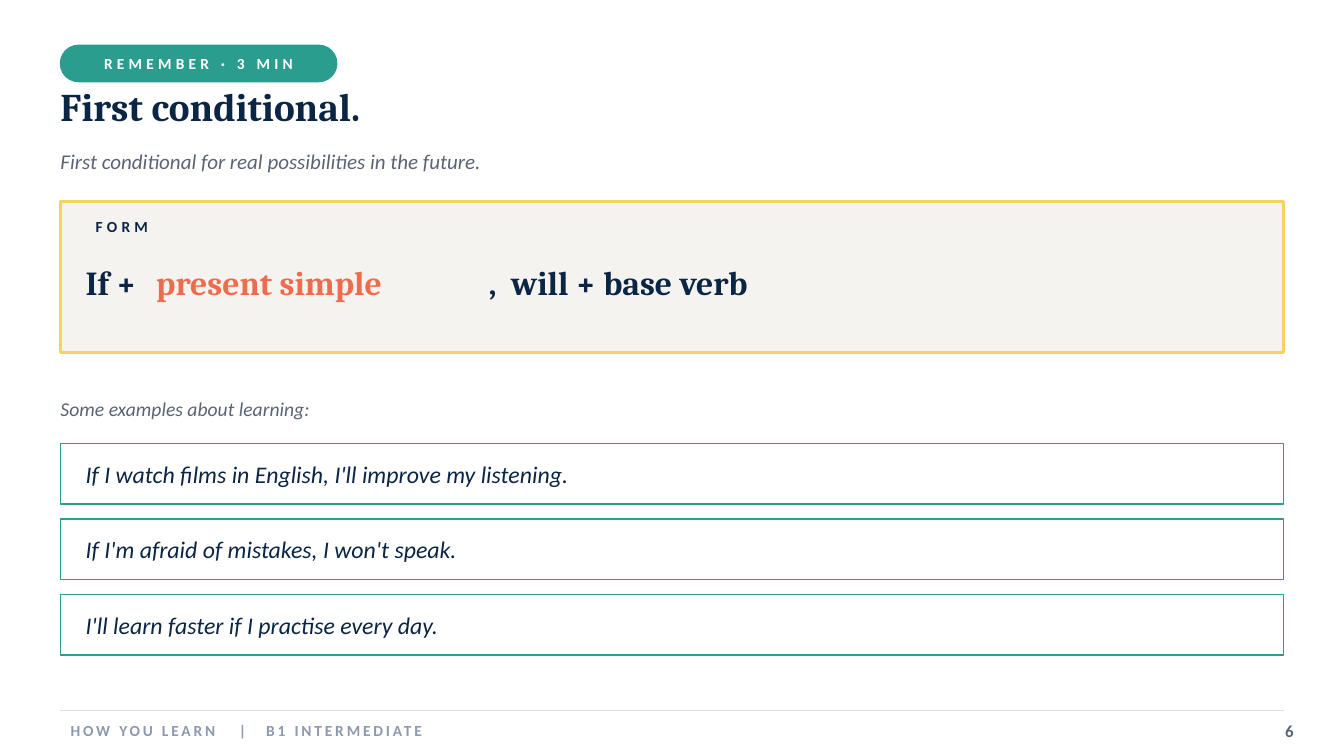
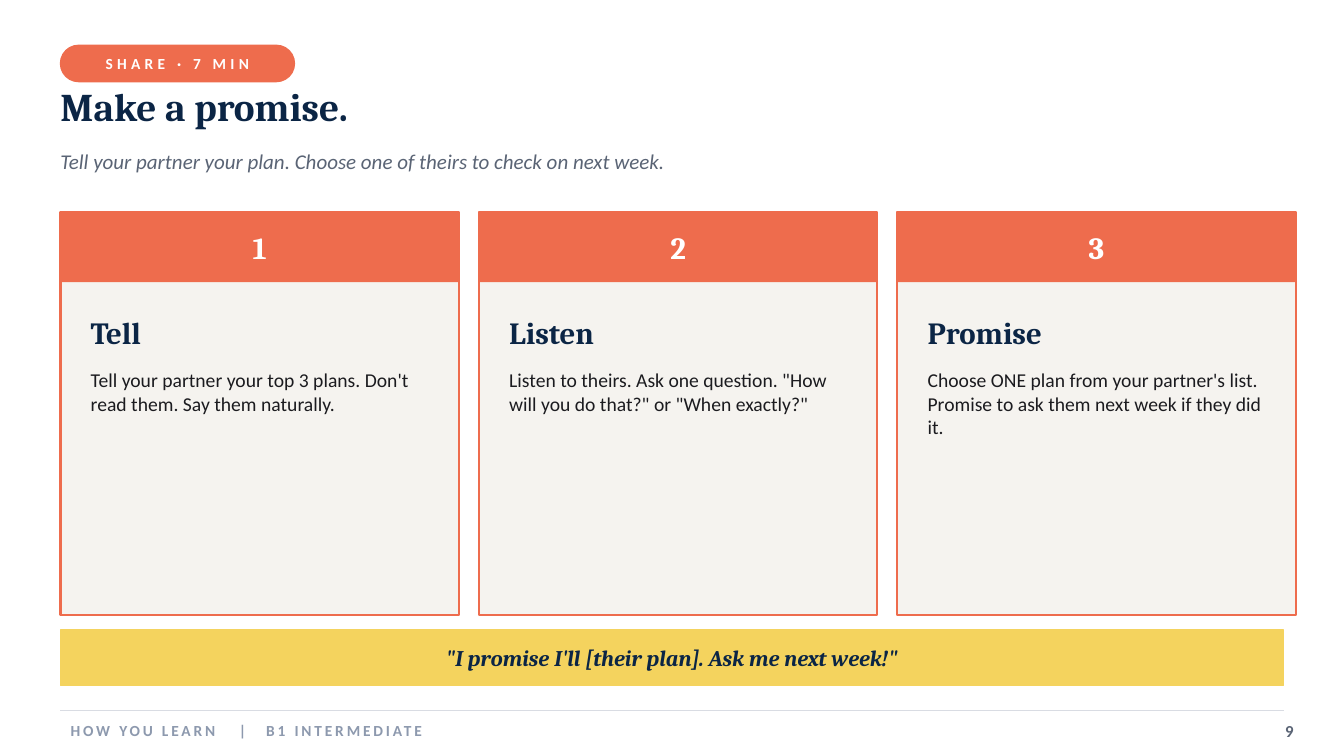
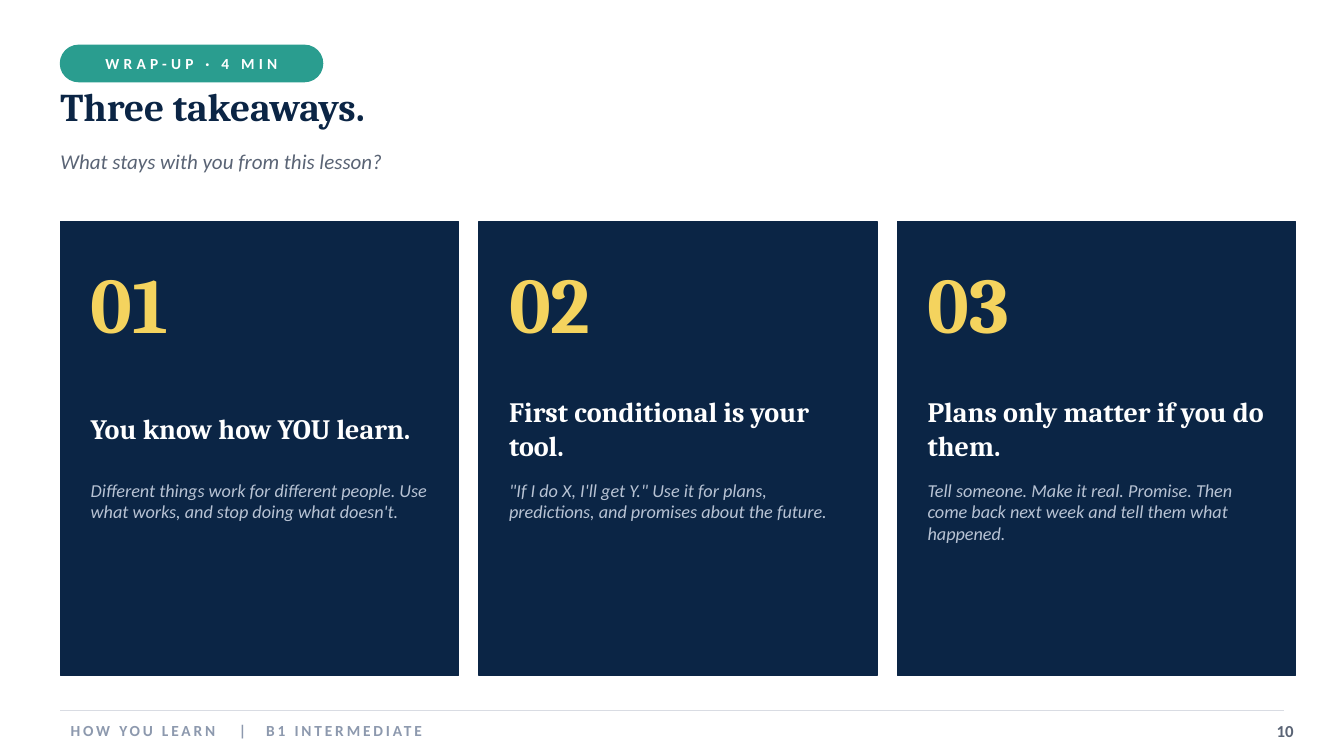
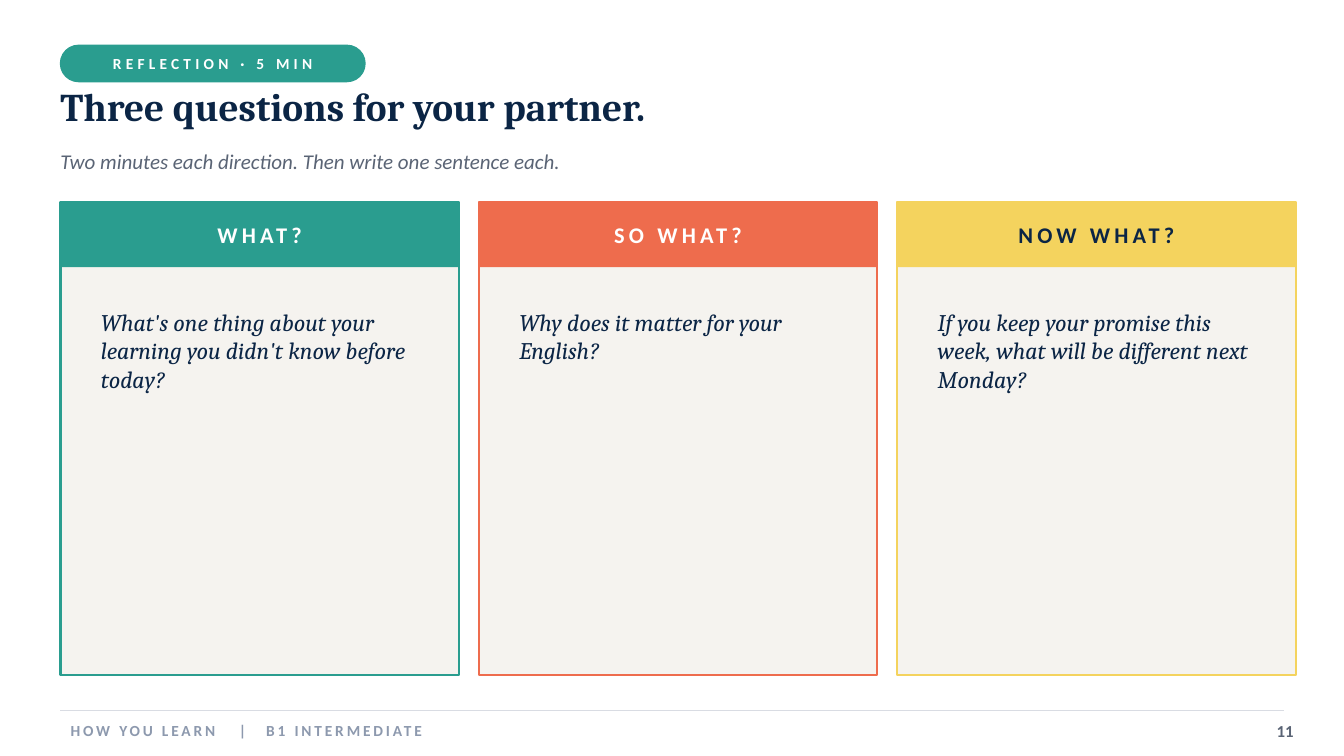
from collections import namedtuple
from dataclasses import dataclass

from lxml.etree import SubElement
from pptx import Presentation
from pptx.dml.color import RGBColor
from pptx.enum.shapes import MSO_CONNECTOR, MSO_SHAPE
from pptx.enum.text import MSO_ANCHOR, PP_ALIGN
from pptx.oxml.ns import qn
from pptx.util import Inches, Pt

Face = namedtuple("Face", "size font color bold italic track", defaults=(False, False, 0))


@dataclass(frozen=True)
class Theme:
    navy: str = "0B2545"
    teal: str = "2A9D8F"
    coral: str = "EE6C4D"
    gold: str = "F4D35E"
    cream: str = "F5F3EF"
    white: str = "FFFFFF"
    rule: str = "D9DCE3"
    pill: Face = Face(11, "Calibri", "FFFFFF", True, track=3)
    title: Face = Face(28, "Cambria", "0B2545", True)
    lead: Face = Face(15, "Calibri", "5A6475", italic=True)
    foot: Face = Face(11, "Calibri", "8D99AE", True, track=2)
    page: Face = Face(12, "Calibri", "5A6475", True)
    label: Face = Face(11, "Calibri", "0B2545", True, track=3)
    form: Face = Face(24, "Cambria", "0B2545", True)
    note: Face = Face(14, "Calibri", "5A6475", italic=True)
    sample: Face = Face(17, "Calibri", "0B2545", italic=True)
    step: Face = Face(22, "Cambria", "0B2545", True)
    body: Face = Face(14, "Calibri", "1B1B1F")
    quote: Face = Face(16, "Cambria", "0B2545", True, True)
    digit: Face = Face(56, "Cambria", "F4D35E", True)
    point: Face = Face(20, "Cambria", "FFFFFF", True)
    detail: Face = Face(13, "Calibri", "B8C3D4", italic=True)
    band: Face = Face(16, "Calibri", "FFFFFF", True, track=3)
    ask: Face = Face(17, "Cambria", "0B2545", italic=True)


theme = Theme()
cell = Inches(0.1)
left, full = 6, 121.3
card, gap, inset = 39.5, 2, 3
inner = card - 2 * inset
cols = [left + i * (card + gap) for i in range(3)]


def block(slide, x, y, w, h, fill, line=None, width=1, kind=MSO_SHAPE.RECTANGLE):
    shape = slide.shapes.add_shape(kind, *[round(n * cell) for n in (x, y, w, h)])
    shape.shadow.inherit = False
    shape.fill.solid()
    shape.fill.fore_color.rgb = RGBColor.from_string(fill)
    if line:
        shape.line.color.rgb = RGBColor.from_string(line)
        shape.line.width = Pt(width)
    else:
        shape.line.fill.background()
    return shape


def write(slide, text, face, place, color=None, align=PP_ALIGN.LEFT,
          anchor=MSO_ANCHOR.MIDDLE, pad=0, tabs=()):
    if isinstance(place, tuple):
        place = slide.shapes.add_textbox(*[round(n * cell) for n in place])
    frame = place.text_frame
    frame.word_wrap = True
    frame.vertical_anchor = anchor
    frame.margin_left = round(pad * cell)
    frame.margin_right = frame.margin_top = frame.margin_bottom = 0
    frame.text = text
    para = frame.paragraphs[0]
    para.alignment = align
    if tabs:
        stops = SubElement(para._p.get_or_add_pPr(), qn("a:tabLst"))
        for stop in tabs:
            SubElement(stops, qn("a:tab"), pos=str(round(stop * cell)), algn="l")
    run = para.runs[0]
    font = run.font
    font.name, font.size = face.font, Pt(face.size)
    font.bold, font.italic = face.bold, face.italic
    font.color.rgb = RGBColor.from_string(color or face.color)
    if face.track:
        run._r.get_or_add_rPr().set("spc", str(face.track * 100))


deck = Presentation()
deck.slide_width, deck.slide_height = round(133.3 * cell), 75 * cell

heads = [
    ("REMEMBER · 3 MIN", theme.teal, "First conditional.",
     "First conditional for real possibilities in the future.", 6),
    ("SHARE · 7 MIN", theme.coral, "Make a promise.",
     "Tell your partner your plan. Choose one of theirs to check on next week.", 9),
    ("WRAP-UP · 4 MIN", theme.teal, "Three takeaways.",
     "What stays with you from this lesson?", 10),
    ("REFLECTION · 5 MIN", theme.teal, "Three questions for your partner.",
     "Two minutes each direction. Then write one sentence each.", 11),
]
for tag, tint, title, lead, page in heads:
    slide = deck.slides.add_slide(deck.slide_layouts[6])
    pill = block(slide, left, 4.5, 5 + 1.4 * len(tag), 3.6, tint, tint,
                 kind=MSO_SHAPE.ROUNDED_RECTANGLE)
    pill.adjustments[0] = 0.5
    write(slide, tag, theme.pill, pill, align=PP_ALIGN.CENTER)
    write(slide, title, theme.title, (left, 7, 120, 7))
    write(slide, lead, theme.lead, (left, 14, 120, 4))
    rule = slide.shapes.add_connector(
        MSO_CONNECTOR.STRAIGHT, *[round(n * cell) for n in (left, 70.5, left + full, 70.5)])
    rule.line.color.rgb = RGBColor.from_string(theme.rule)
    rule.line.width = Pt(0.75)
    SubElement(rule._element.spPr, qn("a:effectLst"))
    write(slide, "HOW YOU LEARN\t|\tB1 INTERMEDIATE", theme.foot,
          (left + 1, 71, 108, 3), tabs=(16.7, 19.4))
    write(slide, str(page), theme.page, (123.3, 71, 5, 3), align=PP_ALIGN.RIGHT)

rules, share, wrap, reflect = deck.slides

block(rules, left, 20, full, 15, theme.cream, theme.gold, 2)
write(rules, "FORM", theme.label, (9.5, 21, 108, 3))
write(rules, "If +", theme.form, (8.5, 25, 7, 6))
write(rules, "present simple", theme.form, (15.5, 25, 33, 6), theme.coral)
write(rules, ",\twill + base verb", theme.form, (48.5, 25, 55, 6), tabs=(2.2,))
write(rules, "Some examples about learning:", theme.note, (left, 38.5, 120, 4))
samples = [
    "If I watch films in English, I'll improve my listening.",
    "If I'm afraid of mistakes, I won't speak.",
    "I'll learn faster if I practise every day.",
]
for i, text in enumerate(samples):
    row = block(rules, left, 44 + 7.5 * i, full, 6, theme.white, theme.teal)
    write(rules, text, theme.sample, row, pad=2.5)

steps = [
    ("Tell", "Tell your partner your top 3 plans. Don't read them. Say them naturally."),
    ("Listen", 'Listen to theirs. Ask one question. "How will you do that?" or "When exactly?"'),
    ("Promise", "Choose ONE plan from your partner's list. "
                "Promise to ask them next week if they did it."),
]
for i, (x, (name, text)) in enumerate(zip(cols, steps), 1):
    block(share, x, 21, card, 40, theme.cream, theme.coral, 1.5)
    band = block(share, x, 21, card, 7, theme.coral)
    write(share, str(i), theme.step, band, theme.white, PP_ALIGN.CENTER)
    write(share, name, theme.step, (x + inset, 30.5, inner, 5))
    write(share, text, theme.body, (x + inset, 36.5, inner, 23), anchor=MSO_ANCHOR.TOP)
strip = block(share, left, 62.5, full, 5.5, theme.gold, theme.gold)
write(share, '"I promise I\'ll [their plan]. Ask me next week!"', theme.quote, strip,
      align=PP_ALIGN.CENTER)

points = [
    ("You know how YOU learn.",
     "Different things work for different people. "
     "Use what works, and stop doing what doesn't."),
    ("First conditional is your tool.",
     '"If I do X, I\'ll get Y." Use it for plans, predictions, '
     "and promises about the future."),
    ("Plans only matter if you do them.",
     "Tell someone. Make it real. Promise. "
     "Then come back next week and tell them what happened."),
]
for i, (x, (name, text)) in enumerate(zip(cols, points), 1):
    block(wrap, x, 22, card, 45, theme.navy, theme.navy)
    write(wrap, f"{i:02}", theme.digit, (x + inset, 25, inner, 10))
    write(wrap, name, theme.point, (x + inset, 38, inner, 9))
    write(wrap, text, theme.detail, (x + inset, 47.5, inner, 18.5), anchor=MSO_ANCHOR.TOP)

asks = [
    ("WHAT?", theme.teal, theme.white,
     "What's one thing about your learning you didn't know before today?"),
    ("SO WHAT?", theme.coral, theme.white, "Why does it matter for your English?"),
    ("NOW WHAT?", theme.gold, theme.navy,
     "If you keep your promise this week, what will be different next Monday?"),
]
for x, (name, tint, ink, text) in zip(cols, asks):
    block(reflect, x, 20, card, 47, theme.cream, tint, 1.5)
    band = block(reflect, x, 20, card, 6.5, tint)
    write(reflect, name, theme.band, band, ink, PP_ALIGN.CENTER)
    write(reflect, text, theme.ask, (x + inset + 1, 30.5, inner - 2, 33),
          anchor=MSO_ANCHOR.TOP)

deck.save("out.pptx")
